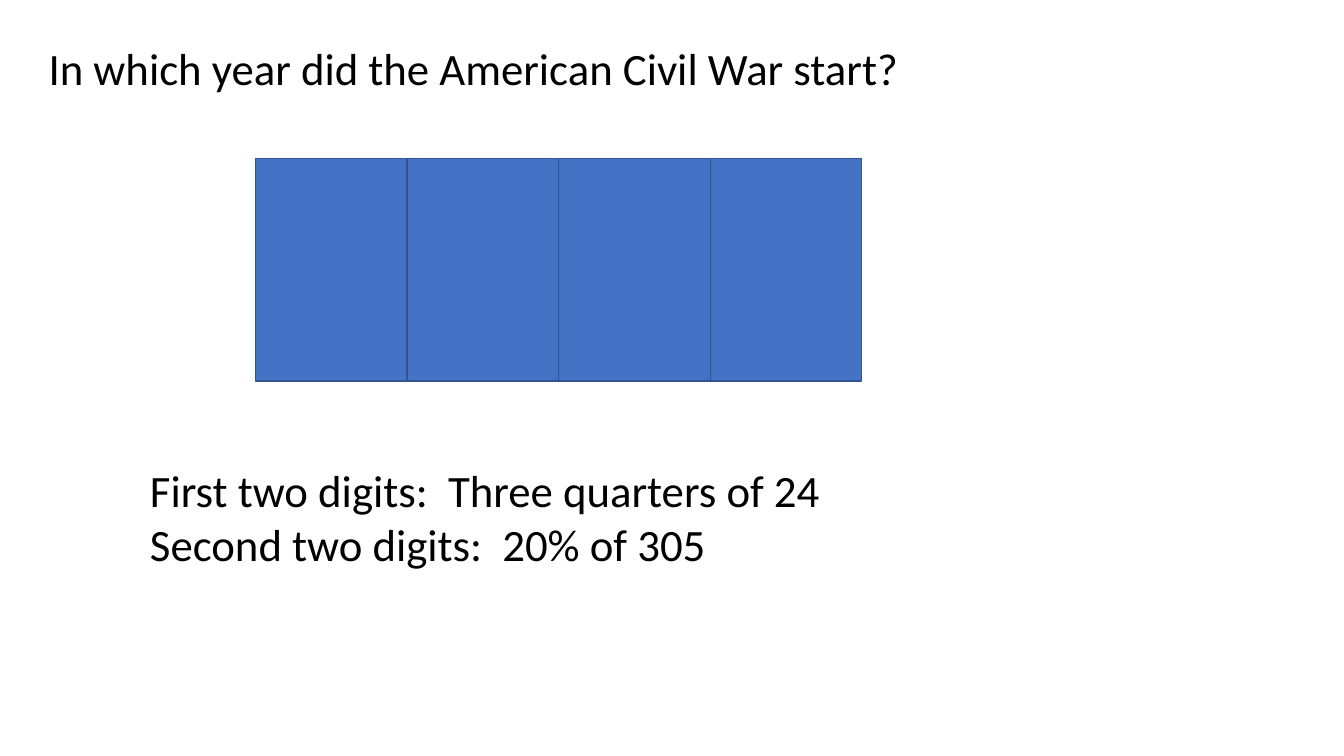
from dataclasses import dataclass

from pptx import Presentation
from pptx.dml.color import RGBColor
from pptx.enum.shapes import MSO_SHAPE
from pptx.enum.text import MSO_ANCHOR, MSO_AUTO_SIZE, PP_ALIGN
from pptx.util import Cm, Pt

RECT = MSO_SHAPE.RECTANGLE
TOP = MSO_ANCHOR.TOP
NO_FIT = MSO_AUTO_SIZE.NONE
LEFT = PP_ALIGN.LEFT
TITLE_ONLY = 5


@dataclass(frozen=True)
class Theme:
    font: str = "Calibri"
    size: Pt = Pt(32)
    text: RGBColor = RGBColor(0x00, 0x00, 0x00)
    tile: RGBColor = RGBColor(0x44, 0x72, 0xC4)
    edge: RGBColor = RGBColor(0x32, 0x54, 0x91)
    edge_width: Pt = Pt(1)


class QuizSlide:
    def __init__(self, prs, theme):
        self.theme = theme
        self.s = prs.slides.add_slide(prs.slide_layouts[TITLE_ONLY])

    def fill_text(self, sp, lines):
        tf = sp.text_frame
        tf.word_wrap = True
        tf.auto_size = NO_FIT
        tf.vertical_anchor = TOP
        for i, line in enumerate(lines):
            p = tf.add_paragraph() if i else tf.paragraphs[0]
            p.alignment = LEFT
            r = p.add_run()
            r.text = line
            r.font.name = self.theme.font
            r.font.size = self.theme.size
            r.font.color.rgb = self.theme.text

    def title(self, text, left, top, width, height):
        sp = self.s.shapes.title
        sp.left, sp.top, sp.width, sp.height = left, top, width, height
        self.fill_text(sp, [text])

    def text(self, lines, left, top, width, height):
        self.fill_text(self.s.shapes.add_textbox(left, top, width, height), lines)

    def tile(self, left, top, width, height):
        sp = self.s.shapes.add_shape(RECT, left, top, width, height)
        sp.shadow.inherit = False
        sp.fill.solid()
        sp.fill.fore_color.rgb = self.theme.tile
        sp.line.color.rgb = self.theme.edge
        sp.line.width = self.theme.edge_width


def main():
    prs = Presentation()
    prs.slide_width, prs.slide_height = Cm(33.87), Cm(19.05)
    quiz = QuizSlide(prs, Theme())

    quiz.title("In which year did the American Civil War start?",
               Cm(0.97), Cm(0.91), Cm(30.23), Cm(1.63))

    tile_width = 3.82
    for digit in range(4):
        quiz.tile(Cm(6.44 + digit * tile_width), Cm(3.99), Cm(tile_width), Cm(5.61))

    quiz.text(["First two digits:  Three quarters of 24",
               "Second two digits:  20% of 305"],
              Cm(3.53), Cm(11.53), Cm(28.04), Cm(3))

    prs.save("out.pptx")


if __name__ == "__main__":
    main()
